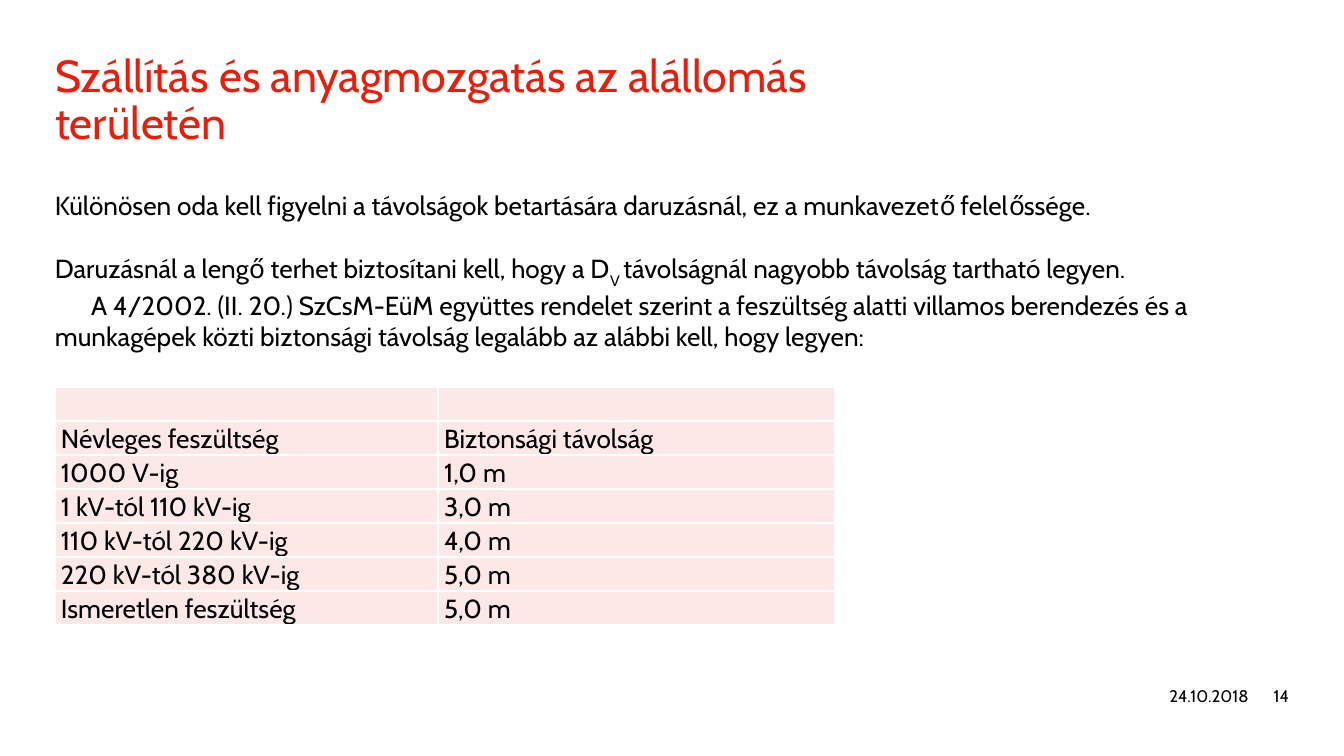
from lxml import etree
from pptx import Presentation
from pptx import util as u
from pptx.dml.color import RGBColor
from pptx.enum import text
from pptx.oxml.ns import qn

RED = RGBColor(0xEA, 0x1C, 0x0A)
BLACK = RGBColor(0, 0, 0)
PINK = RGBColor(0xFB, 0xE8, 0xE7)
FONT = "Cabin"

TITLE = "Szállítás és anyagmozgatás az alállomás területén"
DISTANCES = [
    ("", ""),
    (" Névleges feszültség", " Biztonsági távolság"),
    (" 1000 V-ig", " 1,0 m"),
    (" 1 kV-tól 110 kV-ig", " 3,0 m"),
    (" 110 kV-tól 220 kV-ig", " 4,0 m"),
    (" 220 kV-tól 380 kV-ig", " 5,0 m"),
    (" Ismeretlen feszültség", " 5,0 m"),
]


def add_span(para, words, size=14, color=BLACK, baseline=0):
    """Append formatted text to a paragraph."""
    span = para.add_run()
    span.text = words
    span.font.size = u.Pt(size)
    span.font.name = FONT
    span.font.color.rgb = color
    if baseline:
        span.font._element.set("baseline", str(baseline * 1000))


def add_frame(page, left, top, width, height, margin=0.0):
    """Add a wrapping text box and return its frame."""
    box = page.shapes.add_textbox(*map(u.Inches, (left, top, width, height)))
    frame = box.text_frame
    frame.word_wrap = True
    frame.margin_left = frame.margin_right = u.Inches(margin)
    frame.margin_top = frame.margin_bottom = u.Inches(margin / 2)
    return frame


def add_title(page, left, top, width, height):
    """Place the red heading."""
    para = add_frame(page, left, top, width, height).paragraphs[0]
    para.line_spacing = u.Pt(25)
    add_span(para, TITLE, size=24, color=RED)


def add_body(page, left, top, width, height):
    """Place the three paragraphs of instructions."""
    frame = add_frame(page, left, top, width, height, margin=0.1)
    duty, load, rule = frame.paragraphs[0], frame.add_paragraph(), frame.add_paragraph()
    add_span(duty, "Különösen oda kell figyelni a távolságok betartására daruzásnál, "
                   "ez a munkavezető felelőssége.")
    load.space_before = u.Pt(17)
    add_span(load, "Daruzásnál a lengő terhet biztosítani kell, hogy a D")
    add_span(load, "V ", baseline=-30)
    add_span(load, "távolságnál nagyobb távolság tartható legyen.")
    rule._p.get_or_add_pPr().set("indent", str(u.Inches(0.27)))
    add_span(rule, "A 4/2002. (II. 20.) SzCsM-EüM együttes rendelet szerint a feszültség "
                   "alatti villamos berendezés és a munkagépek közti biztonsági távolság "
                   "legalább az alábbi kell, hogy legyen:")


def add_borders(cell):
    """Draw white one-point lines around a cell."""
    properties = cell._tc.get_or_add_tcPr()
    for index, side in enumerate(("lnL", "lnR", "lnT", "lnB")):
        line = etree.Element(qn(f"a:{side}"), w=str(u.Pt(1)))
        fill = etree.SubElement(line, qn("a:solidFill"))
        etree.SubElement(fill, qn("a:srgbClr"), val="FFFFFF")
        properties.insert(index, line)


def fill_cell(cell, words):
    """Format one table cell and write its text."""
    cell.fill.solid()
    cell.fill.fore_color.rgb = PINK
    add_borders(cell)
    cell.margin_left = cell.margin_right = cell.margin_top = cell.margin_bottom = 0
    para = cell.text_frame.paragraphs[0]
    if words:
        para.alignment = text.PP_ALIGN.JUSTIFY
        para.line_spacing = 1.07
        para.space_before = para.space_after = u.Pt(1)
        add_span(para, words)
    else:
        etree.SubElement(para._p, qn("a:endParaRPr"), sz="1400")


def add_distances(page, left, top, widths, height):
    """Place the table of safety distances."""
    lengths = map(u.Inches, (left, top, sum(widths), height))
    table = page.shapes.add_table(len(DISTANCES), len(widths), *lengths).table
    table.first_row = table.horz_banding = False
    for column, width in zip(table.columns, widths):
        column.width = u.Inches(width)
    for row, entries in enumerate(DISTANCES):
        for column, words in enumerate(entries):
            fill_cell(table.cell(row, column), words)


def add_footer(page, left, top, height):
    """Place the date and the page number side by side."""
    for words, offset, width in (("24.10.2018", 0, 0.83), ("14", 0.83, 0.3)):
        para = add_frame(page, left + offset, top, width, height).paragraphs[0]
        para.alignment = text.PP_ALIGN.RIGHT
        para.line_spacing = u.Pt(11.2)
        add_span(para, words, size=9)


def main():
    """Build the slide and save the deck."""
    deck = Presentation()
    deck.slide_width = u.Inches(10)
    deck.slide_height = deck.slide_width * 9 // 16
    page = deck.slides.add_slide(deck.slide_layouts[6])
    add_title(page, 0.41, 0.41, 6.94, 0.58)
    add_footer(page, 8.46, 5.1, 0.16)
    add_distances(page, 0.41, 2.88, (2.85, 2.95), 1.77)
    add_body(page, 0.31, 1.36, 8.97, 1.58)
    deck.save("out.pptx")


if __name__ == "__main__":
    main()
